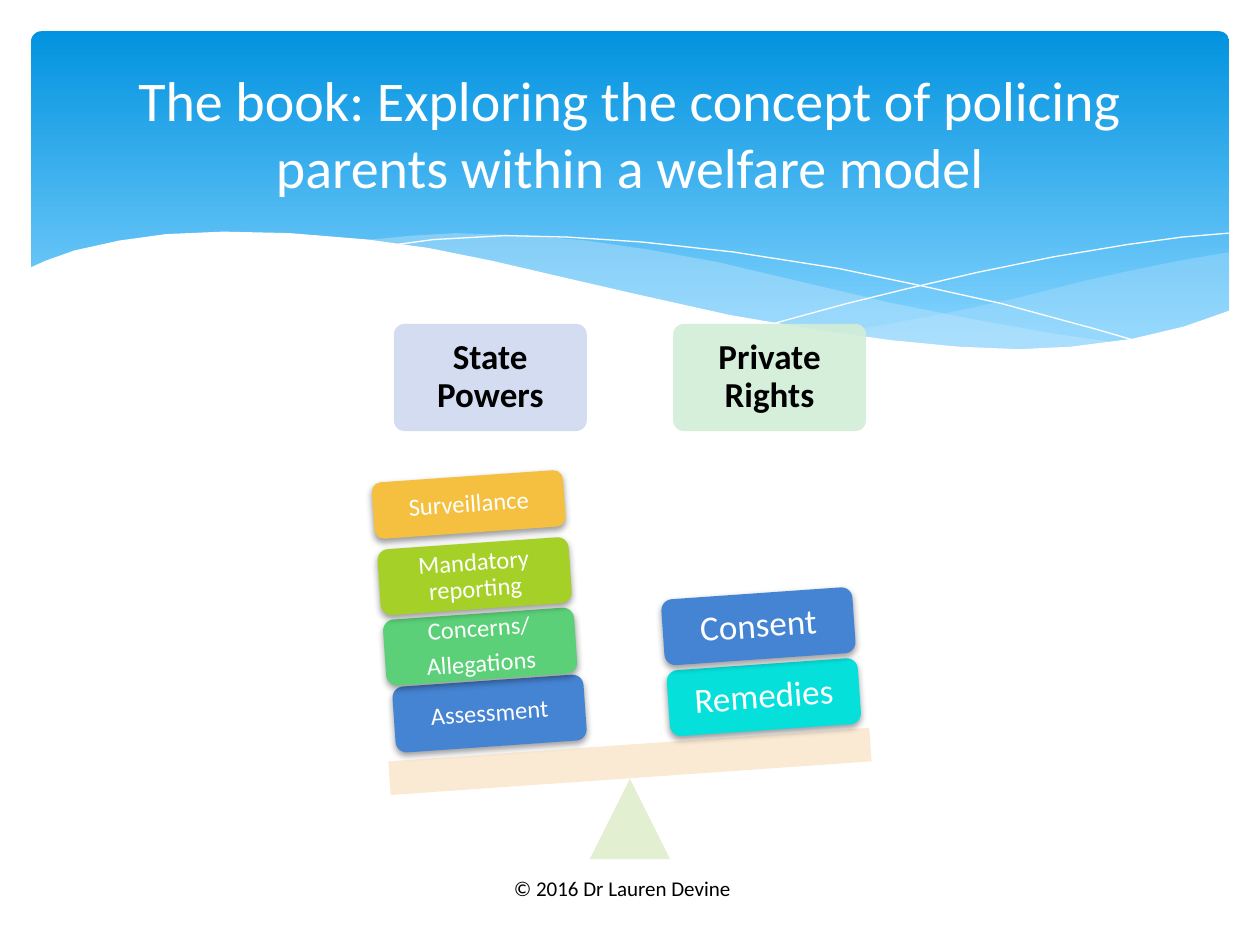
"""Build the slide weighing state powers against private rights on a tilted scale."""
from lxml.etree import SubElement
from pptx import Presentation
from pptx.dml.color import RGBColor
from pptx.enum.shapes import MSO_SHAPE
from pptx.enum.text import MSO_ANCHOR, MSO_AUTO_SIZE, PP_ALIGN
from pptx.oxml.ns import qn
from pptx.util import Cm, Pt

COLOURS = {
    "sky": "0293E0", "pale sky": "83D3FE", "mist": "C6E7FC",
    "white": "FFFFFF", "black": "000000",
    "lavender": "CFD9EF", "mint": "D2EED6", "sage": "E1EECD", "cream": "FBE8CF",
    "blue": "4584D3", "green": "5BD078", "lime": "A5D028",
    "amber": "F5C040", "turquoise": "05E0DB",
}
TILT = 356


def paint(shape, colour, opacity=100):
    shape.shadow.inherit = False
    shape.line.fill.background()
    shape.fill.solid()
    shape.fill.fore_color.rgb = RGBColor.from_string(COLOURS[colour])
    if opacity < 100:
        srgb = shape.fill._xPr.find(qn("a:solidFill")).find(qn("a:srgbClr"))
        SubElement(srgb, qn("a:alpha"), val=str(opacity * 1000))


def write(shape, lines, colour, frame_format, para_format, font_format):
    frame = shape.text_frame
    frame.text = "\n".join(lines)
    for name, value in frame_format.items():
        setattr(frame, name, value)
    for para in frame.paragraphs:
        for name, value in para_format.items():
            setattr(para, name, value)
        for span in para.runs:
            for name, value in font_format.items():
                setattr(span.font, name, value)
            span.font.name = "Calibri"
            span.font.color.rgb = RGBColor.from_string(COLOURS[colour])


deck = Presentation()
deck.slide_width, deck.slide_height = Cm(25.4), Cm(19.05)
page = deck.slides.add_slide(deck.slide_layouts[5])
shapes = page.shapes

banner = shapes.add_shape(MSO_SHAPE.ROUNDED_RECTANGLE, Cm(0.63), Cm(0.63), Cm(24.15), Cm(6.86))
banner.adjustments[0] = 0.03
paint(banner, "sky")
banner.fill.gradient()
banner.fill.gradient_angle = 270
for stop, (colour, position) in zip(banner.fill.gradient_stops, [("sky", 0), ("pale sky", 0.9)]):
    stop.color.rgb = RGBColor.from_string(COLOURS[colour])
    stop.position = position

right_swell = [
    (24.79, 5.08), (23.75, 5.26), (22.63, 5.49), (21.87, 5.66), (20.45, 6.02), (19.13, 6.3),
    (17.93, 6.53), (16.79, 6.73), (17.55, 6.83), (18.59, 6.96), (19.53, 7.04), (20.68, 7.06),
    (21.69, 7.01), (22.58, 6.91), (23.39, 6.73), (24.1, 6.53), (24.79, 6.27),
]
middle_swell = [
    (22.68, 6.93), (21.26, 6.73), (19.69, 6.45), (17.93, 6.1), (15.98, 5.64), (14.45, 5.28),
    (13.06, 5.03), (11.81, 4.85), (10.67, 4.75), (9.17, 4.7), (8.33, 4.75), (7.26, 4.85),
    (8.69, 5.05), (10.26, 5.36), (11.4, 5.64), (13.46, 6.1), (15.27, 6.48), (16.89, 6.76),
    (18.34, 6.96), (19.63, 7.04), (20.78, 7.06), (21.77, 7.04),
]
falling_line = [
    (7.85, 4.95), (8.74, 4.83), (10.19, 4.75), (11.43, 4.78), (12.95, 4.88), (14.78, 5.08),
    (16.89, 5.41), (18.47, 5.74), (20.19, 6.12), (22.07, 6.63), (23.04, 6.91),
]
rising_line = [
    (15.57, 6.53), (17.07, 6.12), (18.29, 5.82), (19.71, 5.49),
    (21.23, 5.18), (22.73, 4.93), (23.83, 4.78), (24.77, 4.7),
]
white_wave = [
    (24.82, 6.25), (23.88, 6.58), (22.83, 6.83), (21.59, 6.99), (20.55, 7.04), (19.33, 6.99),
    (17.98, 6.86), (16.46, 6.65), (14.71, 6.35), (12.78, 5.92), (11.35, 5.59), (9.93, 5.26),
    (8.64, 5), (7.42, 4.83), (5.84, 4.7), (4.5, 4.67), (3.35, 4.72), (2.41, 4.85),
    (1.5, 5.05), (0.91, 5.26), (0.58, 5.41), (0.58, 8.36), (24.82, 8.36),
]
for points, colour, opacity in [
    (right_swell, "mist", 29),
    (middle_swell, "mist", 40),
    (falling_line, None, 100),
    (rising_line, None, 100),
    (white_wave, "white", 100),
]:
    start, *rest = [(Cm(x), Cm(y)) for x, y in points]
    builder = shapes.build_freeform(*start)
    builder.add_line_segments(rest, close=colour is not None)
    wave = builder.convert_to_shape()
    if colour:
        paint(wave, colour, opacity)
    else:
        wave.shadow.inherit = False
        wave.fill.background()
        wave.line.color.rgb = RGBColor.from_string(COLOURS["white"])
        wave.line.width = Pt(0)

title = shapes.title
title.left, title.top, title.width, title.height = Cm(1.27), Cm(0.94), Cm(22.86), Cm(3.48)
write(
    title, ["The book: Exploring the concept of policing parents within a welfare model"], "white",
    {"word_wrap": True, "auto_size": MSO_AUTO_SIZE.NONE, "vertical_anchor": MSO_ANCHOR.MIDDLE},
    {"alignment": PP_ALIGN.CENTER}, {"size": Pt(32)},
)
title.element.getparent().append(title.element)

footer = shapes.add_textbox(Cm(10.11), Cm(17.53), Cm(4.88), Cm(0.76))
write(footer, ["© 2016 Dr Lauren Devine"], "black", {"word_wrap": False}, {}, {"size": Pt(12)})

label_para = {"alignment": PP_ALIGN.CENTER, "line_spacing": 0.9, "space_after": Pt(5)}
sides = ["margin_left", "margin_top", "margin_right", "margin_bottom"]
label_frame = {"word_wrap": True, "vertical_anchor": MSO_ANCHOR.MIDDLE}

for left, text, colour in [(7.94, "State Powers", "lavender"), (13.57, "Private Rights", "mint")]:
    heading = shapes.add_shape(MSO_SHAPE.ROUNDED_RECTANGLE, Cm(left), Cm(6.53), Cm(3.89), Cm(2.16))
    heading.adjustments[0] = 0.1
    paint(heading, colour, 90)
    write(heading, [text], "black", {**label_frame, **dict.fromkeys(sides, Cm(0.2))},
          label_para, {"size": Pt(20), "bold": True})

for preset, left, top, width, height, colour, angle in [
    (MSO_SHAPE.ISOSCELES_TRIANGLE, 11.89, 15.7, 1.62, 1.62, "sage", 0),
    (MSO_SHAPE.RECTANGLE, 7.84, 15.01, 9.72, 0.68, "cream", TILT),
]:
    part = shapes.add_shape(preset, Cm(left), Cm(top), Cm(width), Cm(height))
    part.rotation = angle
    paint(part, colour, 90)

for left, top, height, lines, colour, size, margin in [
    (7.94, 13.72, 1.33, ["Assessment"], "blue", 14, 0.15),
    (7.75, 12.37, 1.33, ["Concerns/", "Allegations"], "green", 14, 0.15),
    (7.64, 10.95, 1.33, ["Mandatory reporting"], "lime", 14, 0.15),
    (7.52, 9.6, 1.14, ["Surveillance"], "amber", 14, 0.15),
    (13.47, 13.39, 1.33, ["Remedies"], "turquoise", 20, 0.2),
    (13.36, 11.96, 1.33, ["Consent"], "blue", 20, 0.2),
]:
    weight = shapes.add_shape(MSO_SHAPE.ROUNDED_RECTANGLE, Cm(left), Cm(top), Cm(3.86), Cm(height))
    weight.rotation = TILT
    paint(weight, colour)
    effects = weight.element.spPr.find(qn("a:effectLst"))
    shadow = SubElement(effects, qn("a:outerShdw"), blurRad=str(Pt(4)), dist=str(Pt(2)),
                        dir="5400000", rotWithShape="0")
    shade = SubElement(shadow, qn("a:srgbClr"), val=COLOURS["black"])
    SubElement(shade, qn("a:alpha"), val="38000")
    write(weight, lines, "white", {**label_frame, **dict.fromkeys(sides, Cm(margin))},
          label_para, {"size": Pt(size)})

deck.save("out.pptx")
